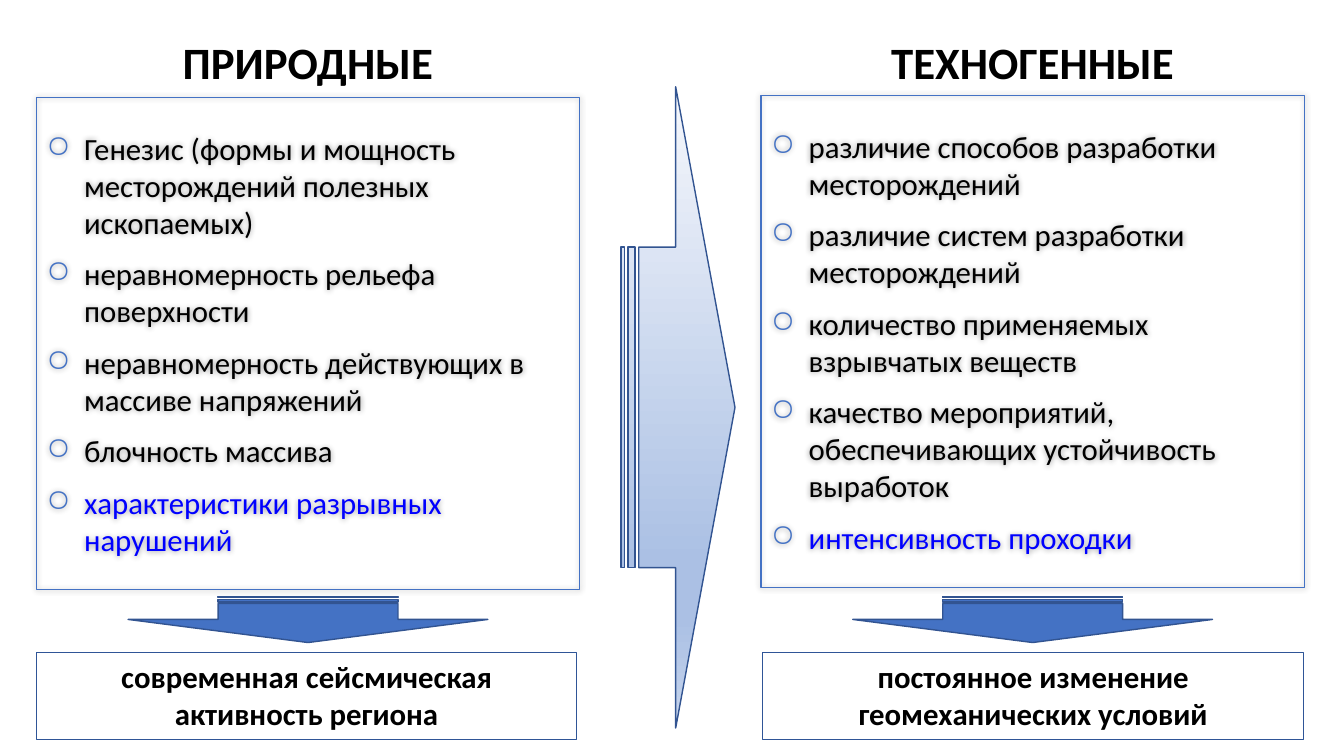
from lxml.etree import SubElement
from pptx import Presentation
from pptx.dml.color import RGBColor
from pptx.enum.shapes import MSO_SHAPE
from pptx.enum.text import MSO_ANCHOR, MSO_AUTO_SIZE, PP_ALIGN
from pptx.oxml.ns import qn
from pptx.util import Pt

BLACK, HIGHLIGHT, ACCENT = "000000", "0000FF", "4472C4"
COLUMN_WIDTH = 388
COLUMNS = [
    {
        "left": 26, "top": 69.8, "result_left": 26,
        "heading": "ПРИРОДНЫЕ",
        "factors": [
            "Генезис (формы и мощность месторождений полезных ископаемых)",
            "неравномерность рельефа поверхности",
            "неравномерность действующих в массиве напряжений",
            "блочность массива",
            "характеристики разрывных нарушений",
        ],
        "result": "современная сейсмическая активность региона",
    },
    {
        "left": 543.6, "top": 68.4, "result_left": 545,
        "heading": "ТЕХНОГЕННЫЕ",
        "factors": [
            "различие способов разработки месторождений",
            "различие систем разработки месторождений",
            "количество применяемых взрывчатых веществ",
            "качество мероприятий, обеспечивающих устойчивость выработок",
            "интенсивность проходки",
        ],
        "result": "постоянное изменение геомеханических условий",
    },
]


def color(value):
    return RGBColor.from_string(value)


def add_outlined_shape(slide, kind, left, top, width, height, line, weight):
    shape = slide.shapes.add_shape(kind, Pt(left), Pt(top), Pt(width), Pt(height))
    shape.shadow.inherit = False
    shape.fill.background()
    shape.line.color.rgb = color(line)
    shape.line.width = Pt(weight)
    return shape


def format_font(paragraph, size, value, bold=False):
    for run in paragraph.runs:
        run.font.name = "Calibri"
        run.font.size = Pt(size)
        run.font.bold = bold
        run.font.color.rgb = color(value)


def set_label(shape, text, size):
    frame = shape.text_frame
    frame.word_wrap = True
    frame.auto_size = MSO_AUTO_SIZE.SHAPE_TO_FIT_TEXT
    frame.vertical_anchor = MSO_ANCHOR.TOP
    frame.text = text
    paragraph = frame.paragraphs[0]
    paragraph.alignment = PP_ALIGN.CENTER
    format_font(paragraph, size, BLACK, bold=True)


def add_bullet(paragraph):
    properties = paragraph._p.get_or_add_pPr()
    properties.set("marL", str(Pt(27)))
    properties.set("indent", str(-Pt(27)))
    bullet_color = SubElement(properties, qn("a:buClr"))
    SubElement(bullet_color, qn("a:srgbClr"), val=ACCENT)
    SubElement(properties, qn("a:buChar"), char="○")


def add_soft_shadow(shape):
    effects = shape._element.spPr.find(qn("a:effectLst"))
    shadow = SubElement(effects, qn("a:outerShdw"), blurRad=str(Pt(4)),
                        dist="0", dir=str(240 * 60000), rotWithShape="0")
    shadow_color = SubElement(shadow, qn("a:srgbClr"), val=BLACK)
    SubElement(shadow_color, qn("a:alpha"), val="40000")


def add_heading(slide, text, left):
    heading = slide.shapes.add_textbox(Pt(left), Pt(21), Pt(COLUMN_WIDTH), Pt(46))
    set_label(heading, text, 32)


def add_factor_box(slide, factors, left, top):
    box = add_outlined_shape(slide, MSO_SHAPE.RECTANGLE, left, top,
                             COLUMN_WIDTH, 351, ACCENT, 0.75)
    add_soft_shadow(box)
    frame = box.text_frame
    frame.word_wrap = True
    frame.vertical_anchor = MSO_ANCHOR.MIDDLE
    frame.text = "\n".join(factors)
    for index, paragraph in enumerate(frame.paragraphs):
        add_bullet(paragraph)
        paragraph.alignment = PP_ALIGN.LEFT
        paragraph.space_before = Pt(4.4 if index else 0)
        paragraph.space_after = Pt(6)
        is_last = index == len(factors) - 1
        format_font(paragraph, 22, HIGHLIGHT if is_last else BLACK)


def add_down_arrow(slide, center):
    width, height = 33, 257
    arrow = add_outlined_shape(slide, MSO_SHAPE.STRIPED_RIGHT_ARROW,
                               center - width / 2, 314, width, height, "325491", 1)
    arrow.rotation = 90
    arrow.fill.solid()
    arrow.fill.fore_color.rgb = color(ACCENT)


def add_result(slide, text, left):
    box = add_outlined_shape(slide, MSO_SHAPE.RECTANGLE, left, 466, 386, 62,
                             "2F5597", 0.75)
    set_label(box, text, 22)


def add_center_arrow(slide):
    arrow = add_outlined_shape(slide, MSO_SHAPE.STRIPED_RIGHT_ARROW,
                               443.5, 62, 81.5, 458, "325491", 1)
    arrow.adjustments[0] = 0.5
    arrow.adjustments[1] = 0.52
    arrow.fill.gradient()
    arrow.fill.gradient_angle = 270
    stops = arrow._element.spPr.find(".//" + qn("a:gsLst"))
    stops.clear()
    for percent, value in [(0, "F6F8FC"), (74, "ABC0E4"), (83, "ABC0E4"), (100, "C7D5ED")]:
        stop = SubElement(stops, qn("a:gs"), pos=str(percent * 1000))
        SubElement(stop, qn("a:srgbClr"), val=value)


def main():
    presentation = Presentation()
    presentation.slide_width = Pt(960)
    presentation.slide_height = Pt(540)
    slide = presentation.slides.add_slide(presentation.slide_layouts[6])
    for column in COLUMNS:
        left = column["left"]
        add_heading(slide, column["heading"], left)
        add_factor_box(slide, column["factors"], left, column["top"])
        add_down_arrow(slide, left + COLUMN_WIDTH / 2)
        add_result(slide, column["result"], column["result_left"])
    add_center_arrow(slide)
    presentation.save("out.pptx")


if __name__ == "__main__":
    main()
